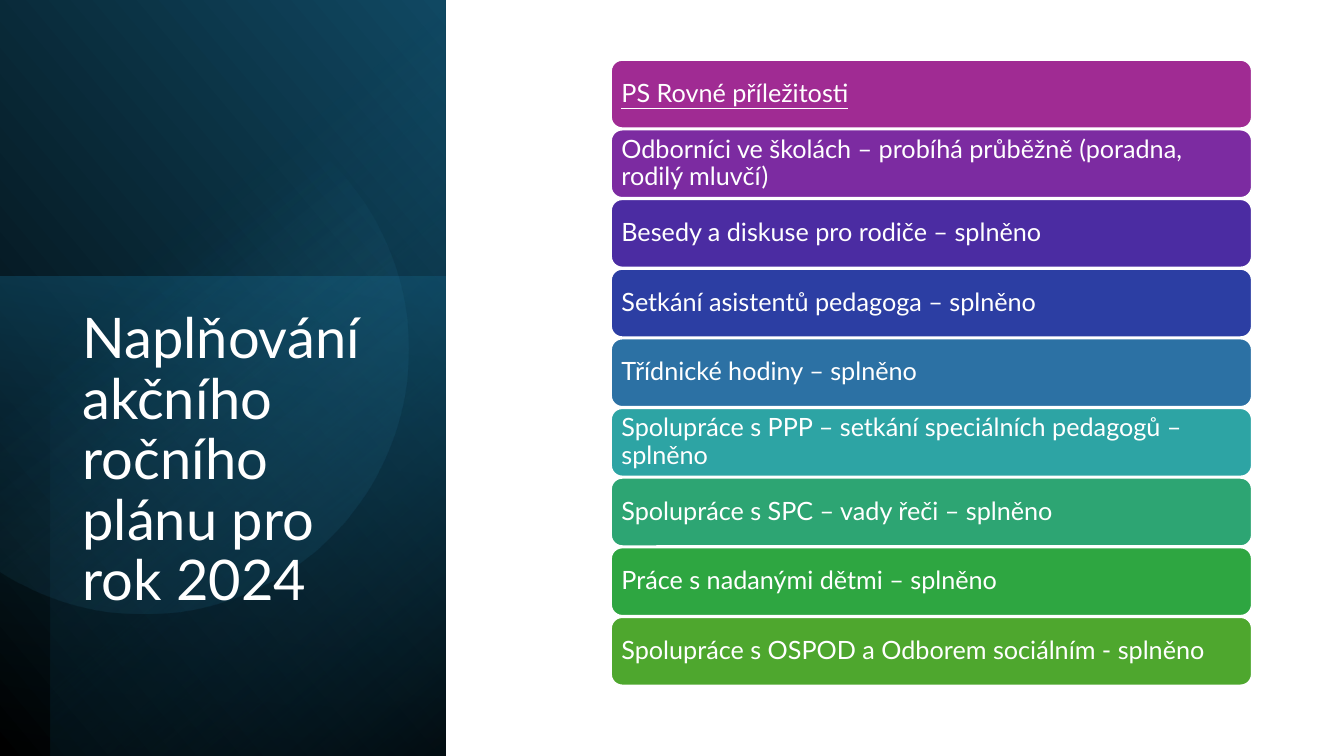
from math import acos, cos, degrees, radians, sin

from pptx import Presentation
from pptx.dml.color import RGBColor
from pptx.enum.shapes import MSO_SHAPE
from pptx.enum.text import MSO_ANCHOR, MSO_AUTO_SIZE, PP_ALIGN
from pptx.oxml import parse_xml
from pptx.oxml.ns import nsdecls, qn
from pptx.util import Pt

FONT = "Lato"
WHITE = RGBColor(0xFF, 0xFF, 0xFF)
BLACK = RGBColor(0x00, 0x00, 0x00)
NAVY = RGBColor(0x10, 0x48, 0x62)
TEAL = RGBColor(0x15, 0x60, 0x82)
DARK_TEAL = RGBColor(0x0B, 0x30, 0x41)
SKY = RGBColor(0x46, 0xB1, 0xE1)

TITLE = "Naplňování akčního ročního plánu pro rok 2024"
ACTIVITIES = [
    ("PS Rovné příležitosti", RGBColor(0xA0, 0x2B, 0x93)),
    ("Odborníci ve školách – probíhá průběžně (poradna, rodilý mluvčí)",
     RGBColor(0x7C, 0x2B, 0xA1)),
    ("Besedy a diskuse pro rodiče – splněno", RGBColor(0x4B, 0x2C, 0xA2)),
    ("Setkání asistentů pedagoga – splněno", RGBColor(0x2C, 0x3E, 0xA3)),
    ("Třídnické hodiny – splněno", RGBColor(0x2C, 0x71, 0xA4)),
    ("Spolupráce s PPP – setkání speciálních pedagogů – splněno",
     RGBColor(0x2D, 0xA4, 0xA4)),
    ("Spolupráce s SPC – vady řeči – splněno", RGBColor(0x2D, 0xA5, 0x73)),
    ("Práce s nadanými dětmi – splněno", RGBColor(0x2E, 0xA6, 0x41)),
    ("Spolupráce s OSPOD a Odborem sociálním - splněno",
     RGBColor(0x4E, 0xA7, 0x2E)),
]
BAR_LEFT, BAR_TOP, BAR_WIDTH, BAR_HEIGHT, BAR_PITCH = 436.3, 42.7, 458, 49, 49.75


def fill_gradient(sp, angle, stops):
    """Fill with (position %, colour, opacity %) stops, without line or shadow."""
    gs = "".join(
        f'<a:gs pos="{pos * 1000}"><a:srgbClr val="{color}">'
        f'<a:alpha val="{opacity * 1000}"/></a:srgbClr></a:gs>'
        for pos, color, opacity in stops)
    grad = parse_xml(
        f'<a:gradFill {nsdecls("a")} rotWithShape="1"><a:gsLst>{gs}</a:gsLst>'
        f'<a:lin ang="{round(angle * 60000)}" scaled="0"/></a:gradFill>')
    sp.shadow.inherit = False
    sp.fill.background()
    spPr = sp._element.spPr
    spPr.replace(spPr.find(qn("a:noFill")), grad)
    sp.line.fill.background()


def add_panel(s, left, top, width, height, rotation, flip, angle, stops):
    sp = s.shapes.add_shape(MSO_SHAPE.RECTANGLE, Pt(left), Pt(top), Pt(width), Pt(height))
    sp.rotation = rotation
    if flip:
        sp._element.spPr.xfrm.set("flipH", "1")
    fill_gradient(sp, angle, stops)


def add_cut_circle(s, cx, cy, radius, angle, stops):
    """Draw a circle cut off by the left edge of the slide."""
    limit = degrees(acos(-cx / radius))
    steps = 120
    turns = [radians(limit * (2 * i / steps - 1)) for i in range(steps + 1)]
    points = [(Pt(cx + radius * cos(t)), Pt(cy + radius * sin(t))) for t in turns]
    builder = s.shapes.build_freeform(*points[0])
    builder.add_line_segments(points[1:], close=True)
    fill_gradient(builder.convert_to_shape(), angle, stops)


def write_text(tf, text, size, anchor, underline=None):
    tf.word_wrap = True
    tf.auto_size = MSO_AUTO_SIZE.NONE
    tf.vertical_anchor = anchor
    p = tf.paragraphs[0]
    p.alignment = PP_ALIGN.LEFT
    p.line_spacing = 0.9
    r = p.add_run()
    r.text = text
    r.font.name = FONT
    r.font.size = Pt(size)
    r.font.color.rgb = WHITE
    r.font.underline = underline


def place_title(s):
    title = s.shapes.title
    title.left, title.top, title.width, title.height = Pt(51.8), Pt(218.2), Pt(226.8), Pt(242)
    write_text(title.text_frame, TITLE, 40, MSO_ANCHOR.TOP)
    s.shapes._spTree.append(title._element)


def add_bar(s, top, text, color, underline):
    sp = s.shapes.add_shape(MSO_SHAPE.ROUNDED_RECTANGLE, Pt(BAR_LEFT), Pt(top),
                            Pt(BAR_WIDTH), Pt(BAR_HEIGHT))
    sp.shadow.inherit = False
    sp.fill.solid()
    sp.fill.fore_color.rgb = color
    sp.line.color.rgb = WHITE
    sp.line.width = Pt(1.5)
    tf = sp.text_frame
    tf.margin_left = tf.margin_right = Pt(5.2)
    tf.margin_top = tf.margin_bottom = Pt(5)
    write_text(tf, text, 18, MSO_ANCHOR.MIDDLE, underline)


def main():
    prs = Presentation()
    prs.slide_width, prs.slide_height = Pt(960), Pt(540)
    s = prs.slides.add_slide(prs.slide_layouts[5])

    add_panel(s, -111.6, 111.6, 541.4, 318.2, 90, True, 310,
              [(0, BLACK, 100), (100, NAVY, 100)])
    add_panel(s, -12.2, 209.5, 342.7, 318.2, 270, False, 190,
              [(0, TEAL, 50), (100, DARK_TEAL, 0)])
    add_panel(s, -92.9, 128.9, 540, 282.2, 270, True, 220,
              [(0, BLACK, 59), (69, TEAL, 0)])
    add_cut_circle(s, 103, 249.5, 188.8, 51.6, [(39, SKY, 0), (100, NAVY, 26)])
    place_title(s)

    for i, (text, color) in enumerate(ACTIVITIES):
        add_bar(s, BAR_TOP + i * BAR_PITCH, text, color, underline=i == 0)

    prs.save("out.pptx")


if __name__ == "__main__":
    main()
